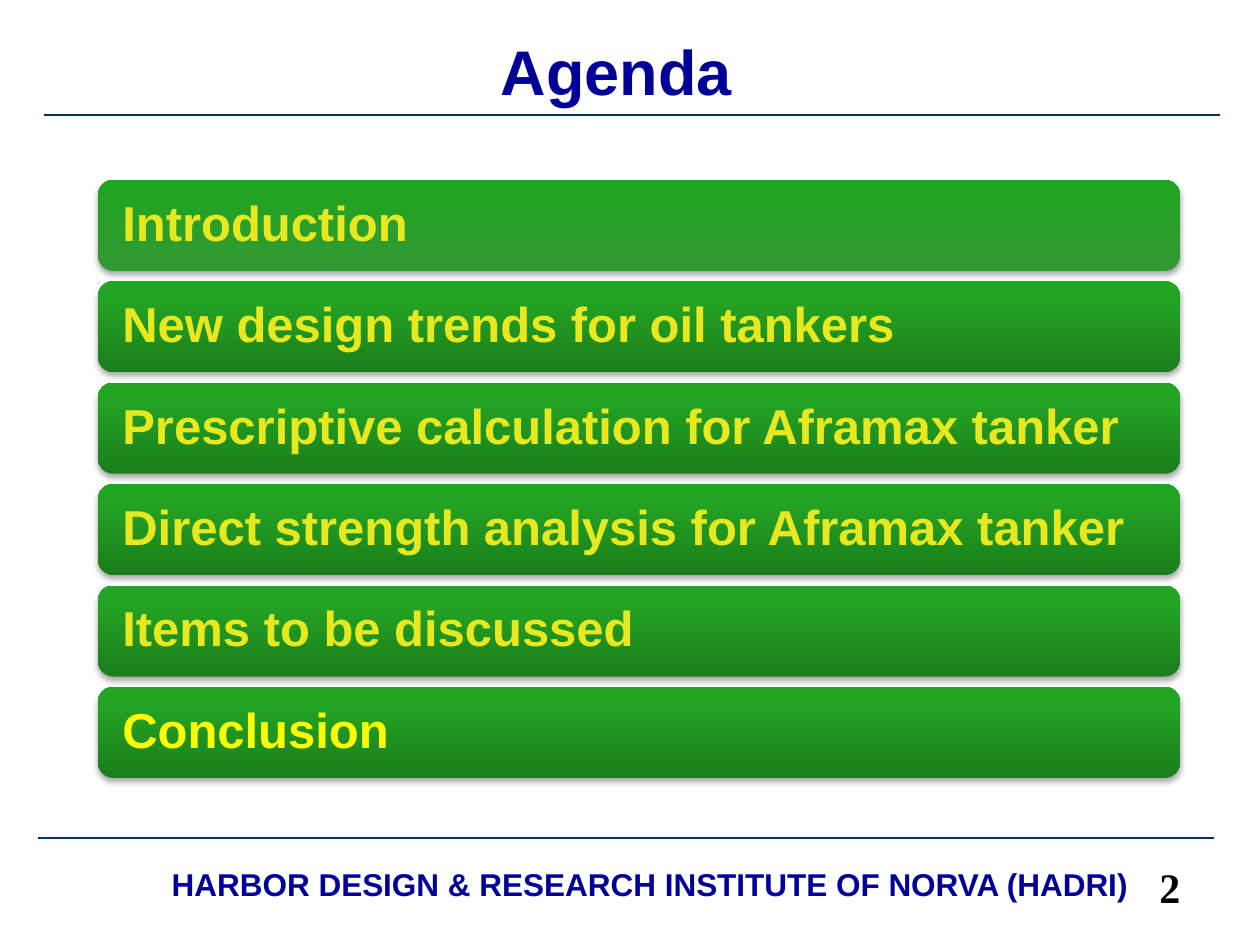
from lxml.etree import SubElement
from pptx import Presentation
from pptx.dml.color import RGBColor
from pptx.enum.shapes import MSO_CONNECTOR as Connector, MSO_SHAPE as Shape
from pptx.enum.text import MSO_ANCHOR as Anchor, PP_ALIGN as Align
from pptx.oxml.ns import qn
from pptx.util import Pt

# Content
TITLE = "Agenda "
AGENDA = [
    "Introduction",
    "New design trends for oil tankers",
    "Prescriptive calculation for Aframax tanker",
    "Direct strength analysis for Aframax tanker",
    "Items to be discussed",
    "Conclusion",
]
FOOTER = "HARBOR DESIGN & RESEARCH INSTITUTE OF NORVA (HADRI)"
PAGE_NUMBER = "2"

COLORS = {
    "navy": "000099", "rule": "003366", "black": "000000",
    "item": "E8E820", "last_item": "FFFF00",
    "first_base": "339933", "base": "1B7E1B", "mid": "23A323", "top": "20A620",
}

# Layout in px
BAR_LEFT, BAR_WIDTH, BAR_HEIGHT = 98, 1082, 91
FIRST_TOP, LAST_TOP = 180, 687
RULES = [(38, 1214, 838), (44, 1220, 115)]


def px(value):
    return round(value * 914400 / 126)


def write(frame, text, size, color, font="Arial", align=Align.LEFT, spacing=None):
    para = frame.paragraphs[0]
    para.alignment = align
    para.line_spacing = spacing
    span = para.add_run()
    span.text = text
    span.font.name = font
    span.font.size = Pt(size)
    span.font.bold = True
    span.font.color.rgb = RGBColor.from_string(COLORS[color])


def add_label(page, place, *args, **kwargs):
    box = page.shapes.add_textbox(*map(px, place))
    box.text_frame.word_wrap = True
    write(box.text_frame, *args, **kwargs)


def add_rule(page, left, right, y):
    rule = page.shapes.add_connector(Connector.STRAIGHT, px(left), px(y), px(right), px(y))
    rule.line.color.rgb = RGBColor.from_string(COLORS["rule"])
    rule.line.width = Pt(1)
    SubElement(rule._element.spPr, qn("a:effectLst"))


def fill_gradient(bar, base):
    bar.fill.gradient()
    bar.fill.gradient_angle = 90
    stops = bar._element.spPr.find(".//" + qn("a:gsLst"))
    for stop in list(stops):
        stops.remove(stop)
    for percent, color in ((0, base), (80, "mid"), (100, "top")):
        stop = SubElement(stops, qn("a:gs"), pos=str(percent * 1000))
        SubElement(stop, qn("a:srgbClr"), val=COLORS[color])


def add_shadow(bar):
    bar.shadow.inherit = False
    effects = bar._element.spPr.find(qn("a:effectLst"))
    shadow = SubElement(effects, qn("a:outerShdw"), blurRad=str(Pt(3.1)),
                        dist=str(Pt(1.8)), dir="5400000", rotWithShape="0")
    tint = SubElement(shadow, qn("a:srgbClr"), val=COLORS["black"])
    SubElement(tint, qn("a:alpha"), val="35000")


def add_bar(page, top, text, base, color):
    bar = page.shapes.add_shape(Shape.ROUNDED_RECTANGLE, px(BAR_LEFT), px(top),
                                px(BAR_WIDTH), px(BAR_HEIGHT))
    fill_gradient(bar, base)
    bar.line.fill.background()
    add_shadow(bar)
    frame = bar.text_frame
    frame.word_wrap = True
    frame.vertical_anchor = Anchor.MIDDLE
    frame.margin_left = frame.margin_right = px(20)
    write(frame, text, 28, color, spacing=0.9)


def main():
    deck = Presentation()
    deck.slide_width, deck.slide_height = px(1260), px(945)
    page = deck.slides.add_slide(deck.slide_layouts[5])

    # Rules, footer and page number
    for rule in RULES:
        add_rule(page, *rule)
    add_label(page, (144, 866, 1012, 43), FOOTER, 18, "navy",
              align=Align.CENTER, spacing=0.8)
    add_label(page, (1147, 861, 79, 58), PAGE_NUMBER, 24, "black",
              font="Times New Roman", spacing=0.9)

    # Agenda bars
    last = len(AGENDA) - 1
    pitch = (LAST_TOP - FIRST_TOP) / last
    for index, text in enumerate(AGENDA):
        add_bar(page, FIRST_TOP + index * pitch, text,
                "first_base" if index == 0 else "base",
                "last_item" if index == last else "item")

    # Title
    title = page.shapes.title
    title.left, title.top, title.width, title.height = map(px, (243, 26, 764, 89))
    title.text_frame.vertical_anchor = Anchor.TOP
    write(title.text_frame, TITLE, 36, "navy", align=Align.CENTER)

    deck.save("out.pptx")


if __name__ == "__main__":
    main()
